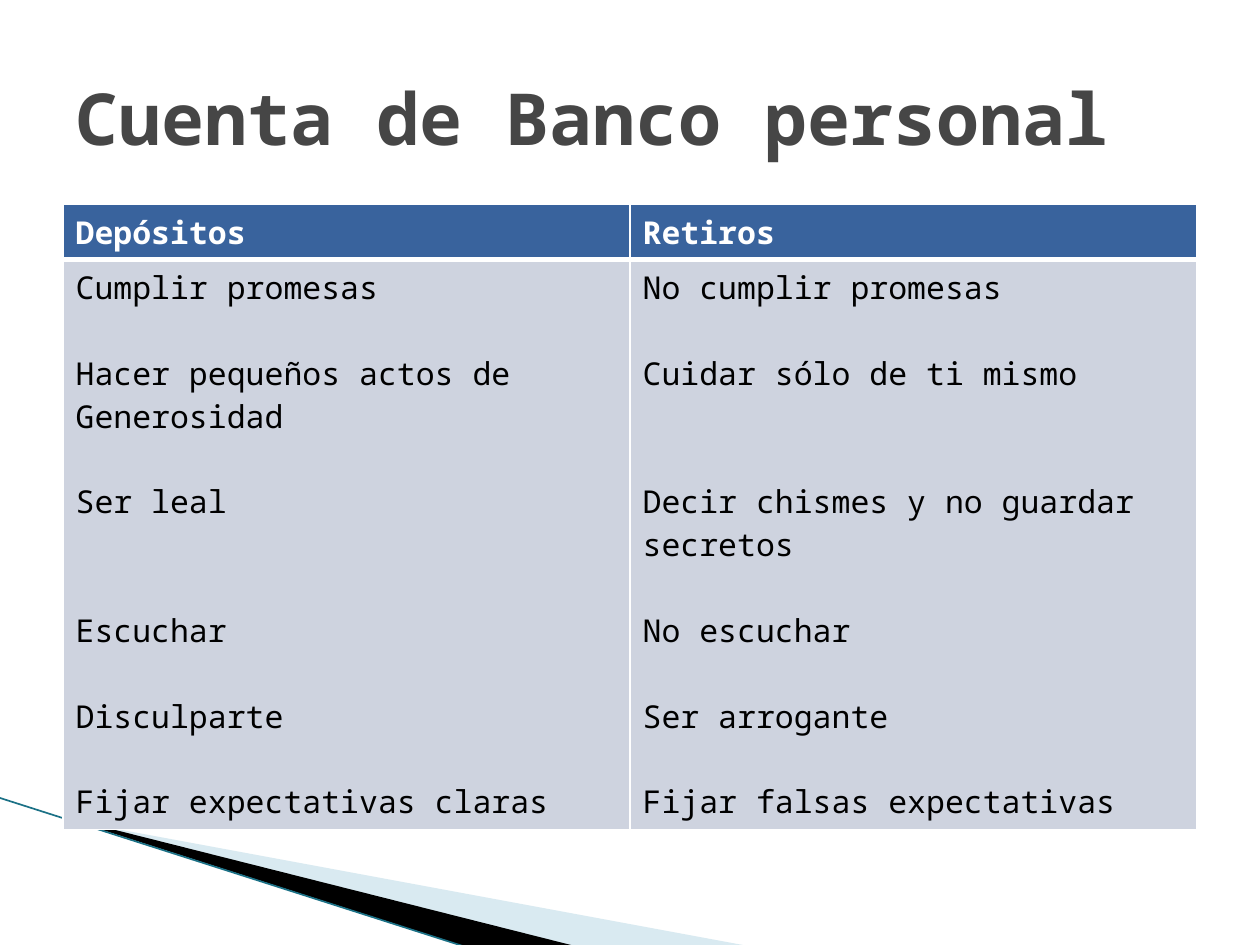
from typing import NamedTuple

from lxml import etree
from pptx import Presentation
from pptx.dml.color import RGBColor
from pptx.enum.shapes import MSO_CONNECTOR
from pptx.enum.text import MSO_ANCHOR, PP_ALIGN
from pptx.oxml.ns import qn
from pptx.util import Emu, Inches, Pt

STRAIGHT = MSO_CONNECTOR.STRAIGHT
MIDDLE = MSO_ANCHOR.MIDDLE
LEFT = PP_ALIGN.LEFT
WIDE, HIGH = Inches(10), Inches(7.5)
FONT = "Noto Sans Mono"
SIZE = 18
LINE = 24.5  # height of one text line in points
HEX = {
    "title": "464646", "head": "39639D", "body": "CED3DF", "white": "FFFFFF",
    "black": "000000", "pale": "A0CBDC", "teal": "1B7186",
}


class Wedge(NamedTuple):
    color: str
    points: list[tuple[float, float]]  # inches
    alpha: int = 100


class Item(NamedTuple):
    text: str
    gap: int = 1  # free lines above


class Column(NamedTuple):
    head: str
    items: list[Item]


WEDGES = [
    Wedge("pale", [(0.55, 6.51), (5.95, 7.51), (4.56, 7.51), (0.55, 6.5)], 40),
    Wedge("black", [(0.53, 6.49), (4.57, 7.51), (3.72, 7.52), (0.54, 6.5)]),
]
COLUMNS = [
    Column("Depósitos", [
        Item("Cumplir promesas", 0),
        Item("Hacer pequeños actos de"),
        Item("Generosidad", 0),
        Item("Ser leal"),
        Item("Escuchar", 2),
        Item("Disculparte"),
        Item("Fijar expectativas claras"),
    ]),
    Column("Retiros", [
        Item("No cumplir promesas", 0),
        Item("Cuidar sólo de ti mismo"),
        Item("Decir chismes y no guardar secretos", 2),
        Item("No escuchar"),
        Item("Ser arrogante"),
        Item("Fijar falsas expectativas"),
    ]),
]


def rgb(name: str) -> RGBColor:
    return RGBColor.from_string(HEX[name])


def write(para, text: str, size: float, color: str, bold: bool) -> None:
    run = para.add_run()
    run.text = text
    font = run.font
    font.name, font.size, font.bold = FONT, Pt(size), bold
    font.color.rgb = rgb(color)


def draw_wedge(slide, wedge: Wedge) -> None:
    start, *rest = [(Inches(x), Inches(y)) for x, y in wedge.points]
    pen = slide.shapes.build_freeform(*start)
    pen.add_line_segments(rest, close=True)
    shape = pen.convert_to_shape()
    shape.shadow.inherit = False
    shape.line.fill.background()
    shape.fill.solid()
    shape.fill.fore_color.rgb = rgb(wedge.color)
    if wedge.alpha < 100:
        tint = shape.fill._xPr.find(".//" + qn("a:srgbClr"))
        etree.SubElement(tint, qn("a:alpha"), val=str(wedge.alpha * 1000))


def draw_edge(slide) -> None:
    edge = slide.shapes.add_connector(
        STRAIGHT, Inches(-0.01), Inches(6.33), Inches(3.71), Inches(7.52))
    edge.line.color.rgb = rgb("teal")
    edge.line.width = Pt(0.95)
    etree.SubElement(edge._element.spPr, qn("a:effectLst"))


def style_cell(cell, fill: str, top: int, base: int) -> None:
    """Fill a cell and give it white borders, top and base in points."""
    props = cell._tc.get_or_add_tcPr()
    for side, width in zip("LRTB", (1, 1, top, base)):
        line = etree.SubElement(props, qn(f"a:ln{side}"), w=str(Pt(width)))
        solid = etree.SubElement(line, qn("a:solidFill"))
        etree.SubElement(solid, qn("a:srgbClr"), val=HEX["white"])
    cell.fill.solid()
    cell.fill.fore_color.rgb = rgb(fill)


def draw_table(slide) -> None:
    left, top = int(WIDE * 0.05), Inches(1.62)
    rows = Inches(0.41), Inches(4.52)
    table = slide.shapes.add_table(
        2, len(COLUMNS), left, top, WIDE - 2 * left, Emu(sum(rows))).table
    for row, height in zip(table.rows, rows):
        row.height = height
    for col, column in enumerate(COLUMNS):
        head, body = table.cell(0, col), table.cell(1, col)
        style_cell(head, "head", 1, 3)
        write(head.text_frame.paragraphs[0], column.head, SIZE, "white", True)
        style_cell(body, "body", 3, 1)
        frame = body.text_frame
        for pos, item in enumerate(column.items):
            para = frame.add_paragraph() if pos else frame.paragraphs[0]
            if item.gap:
                para.space_before = Pt(item.gap * LINE)
            write(para, item.text, SIZE, "black", False)


def draw_title(slide) -> None:
    title = slide.shapes.title
    title.left, title.top = int(WIDE * 0.05), int(HIGH * 0.04)
    title.width, title.height = int(WIDE * 0.9), Inches(1.25)
    frame = title.text_frame
    frame.vertical_anchor = MIDDLE
    frame.word_wrap = True
    para = frame.paragraphs[0]
    para.alignment = LEFT
    write(para, "Cuenta de Banco personal", 41, "title", True)


def main() -> None:
    deck = Presentation()
    deck.slide_width, deck.slide_height = WIDE, HIGH
    slide = deck.slides.add_slide(deck.slide_layouts[5])
    for wedge in WEDGES:
        draw_wedge(slide, wedge)
    draw_edge(slide)
    draw_table(slide)
    draw_title(slide)
    deck.save("out.pptx")


if __name__ == "__main__":
    main()
